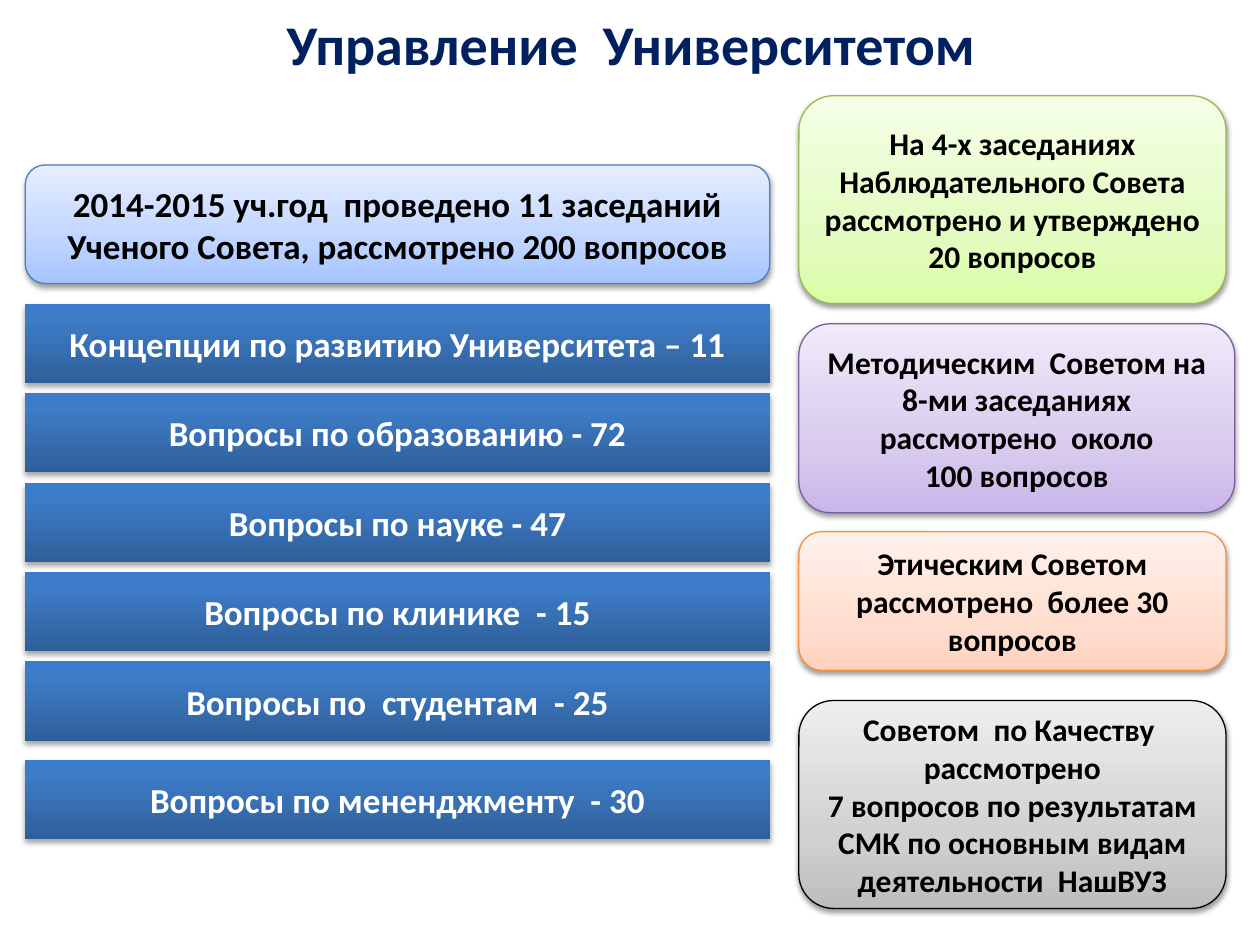
import copy
from dataclasses import dataclass

import pptx
import pptx.dml.color
import pptx.enum.shapes
import pptx.enum.text
import pptx.oxml
import pptx.oxml.ns
import pptx.util
from lxml import etree

Inches = pptx.util.Inches
Pt = pptx.util.Pt
qn = pptx.oxml.ns.qn
KIND = pptx.enum.shapes.MSO_SHAPE
ALIGN = pptx.enum.text.PP_ALIGN
MIDDLE = pptx.enum.text.MSO_ANCHOR.MIDDLE


@dataclass
class Look:
    stops: tuple[str, str, str]  # from bottom to top
    line: str | None
    mid: float = 0.35
    ink: str = "000000"
    dim: int = 38  # shadow strength, percent
    drop: float = 1.6  # shadow distance, points


@dataclass
class Box:
    text: str
    left: float
    top: float
    width: float
    height: float
    look: Look
    size: int = 18


BLUE = Look(("A4C4FF", "BFD4FF", "E6EEFF"), "4B7EBC")
GREEN = Look(("DAFDA7", "E4FCC2", "F5FFE7"), "98B955")
PURPLE = Look(("C9B5E8", "D8CBEE", "F0EAF9"), "7D60A0")
ORANGE = Look(("FFD2BD", "FFDED0", "FFF2ED"), "F69240")
GREY = Look(("BDBDBD", "D1D1D1", "EEEEEE"), "000000")
BAR = Look(("2F5F99", "3D7CC7", "3A7CCB"), None, 0.8, "FFFFFF", 35, 1.8)

LEFT, WIDE = 0.2, 5.91
RIGHT, SLIM = 6.34, 3.39
FIRST, STEP, HIGH = 2.41, 0.71, 0.63

TOPICS = [
    "Концепции по развитию Университета – 11",
    "Вопросы по образованию - 72",
    "Вопросы по науке - 47",
    "Вопросы по клинике  - 15",
    "Вопросы по  студентам  - 25",
    "Вопросы по мененджменту  - 30",
]

PANELS = [
    Box("2014-2015 уч.год  проведено 11 заседаний\n"
        "Ученого Совета, рассмотрено 200 вопросов",
        LEFT, 1.31, WIDE, 0.94, BLUE, 20),
    Box("На 4-х заседаниях Наблюдательного Совета рассмотрено и утверждено "
        "20 вопросов", RIGHT, 0.76, SLIM, 1.65, GREEN),
    Box("Методическим  Советом на 8-ми заседаниях рассмотрено  около\n"
        "100 вопросов", RIGHT, 2.57, 3.46, 1.5, PURPLE),
    Box("Этическим Советом рассмотрено  более 30 вопросов",
        RIGHT, 4.22, SLIM, 1.1, ORANGE),
    Box("Советом  по Качеству  рассмотрено\n"
        "7 вопросов по результатам СМК по основным видам "
        "деятельности  НашВУЗ", RIGHT, 5.56, SLIM, 1.65, GREY),
]


def color(code: str) -> pptx.dml.color.RGBColor:
    return pptx.dml.color.RGBColor.from_string(code)


def place(shape, left: float, top: float, width: float, height: float) -> None:
    shape.left, shape.top = Inches(left), Inches(top)
    shape.width, shape.height = Inches(width), Inches(height)


def write(shape, text: str, size: int, ink: str) -> None:
    frame = shape.text_frame
    frame.text = text
    frame.word_wrap = True
    frame.vertical_anchor = MIDDLE
    for para in frame.paragraphs:
        para.alignment = ALIGN.CENTER
        for run in para.runs:
            font = run.font
            font.name, font.size, font.bold = "Calibri", Pt(size), True
            font.color.rgb = color(ink)


def shade(shape, look: Look) -> None:
    """Fill with a three-stop gradient that rises from the bottom edge."""
    fill = shape.fill
    fill.gradient()
    fill.gradient_angle = 90
    first = shape._element.spPr.find(".//" + qn("a:gs"))
    first.addnext(copy.deepcopy(first))
    spots = (0, look.mid, 1)
    for stop, code, spot in zip(fill.gradient_stops, look.stops, spots):
        stop.color.rgb = color(code)
        stop.position = spot


def cast(shape, look: Look) -> None:
    """Add a soft shadow straight below the shape."""
    shape.shadow.inherit = False
    effects = shape._element.spPr.find(qn("a:effectLst"))
    outer = etree.SubElement(
        effects, qn("a:outerShdw"), blurRad=str(Pt(3.1)),
        dist=str(Pt(look.drop)), dir="5400000", rotWithShape="0")
    tint = etree.SubElement(outer, qn("a:srgbClr"), val="000000")
    etree.SubElement(tint, qn("a:alpha"), val=str(look.dim * 1000))


def draw(slide, box: Box) -> None:
    look = box.look
    kind = KIND.ROUNDED_RECTANGLE if look.line else KIND.RECTANGLE
    shape = slide.shapes.add_shape(kind, 0, 0, 0, 0)
    place(shape, box.left, box.top, box.width, box.height)
    shade(shape, look)
    if look.line:
        shape.line.color.rgb = color(look.line)
        shape.line.width = Pt(0.75)
    else:
        shape.line.fill.background()
    cast(shape, look)
    write(shape, box.text, box.size, look.ink)


def main() -> None:
    deck = pptx.Presentation()
    deck.slide_width, deck.slide_height = Inches(10), Inches(7.5)
    slide = deck.slides.add_slide(deck.slide_layouts[5])

    # Title
    title = slide.shapes.title
    place(title, 0.51, 0, 9, 0.68)
    write(title, "Управление  Университетом", 32, "002060")

    # Council panels
    for box in PANELS:
        draw(slide, box)

    # Topic bars; the last one stands a little apart
    for i, text in enumerate(TOPICS):
        gap = 0.07 if i == len(TOPICS) - 1 else 0
        top = FIRST + i * STEP + gap
        draw(slide, Box(text, LEFT, top, WIDE, HIGH, BAR, 20))

    deck.save("out.pptx")


if __name__ == "__main__":
    main()
